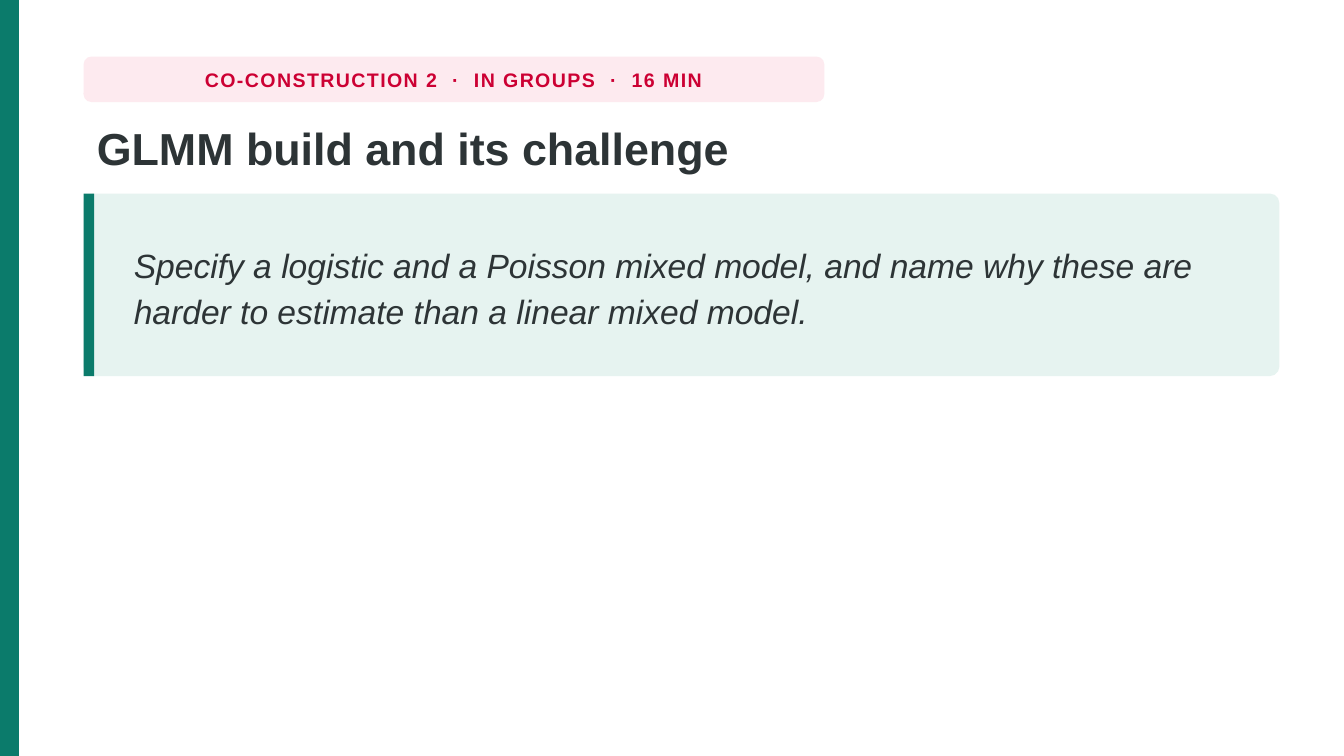
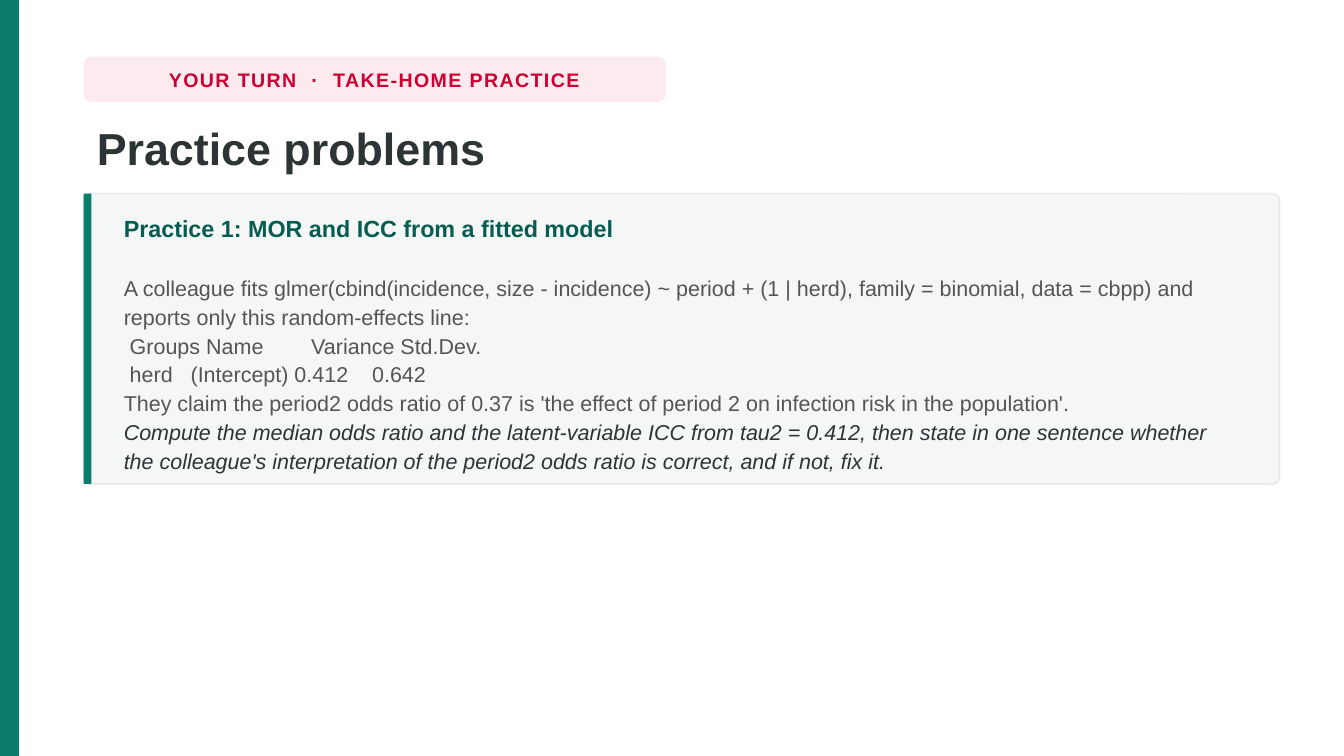
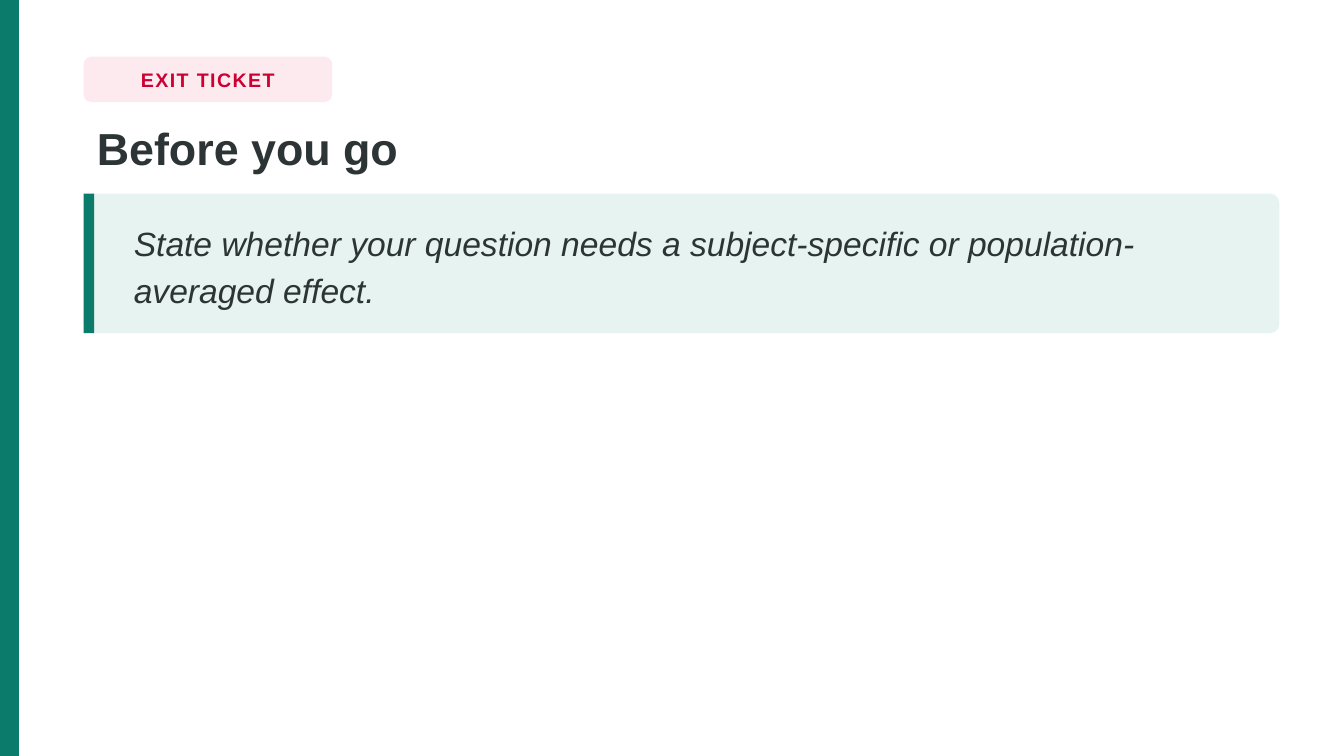
"""Build three activity slides for a session on mixed models."""
from pptx import Presentation, util as u
from pptx.dml import color
from pptx.enum import shapes, text

COLORS = {
    "green": "0B7B6B",
    "dark_green": "065C50",
    "mint": "E6F3F0",
    "pink": "FDEAEF",
    "red": "CC0033",
    "ink": "2D3436",
    "gray": "555555",
    "mist": "F4F7F6",
    "edge": "E8ECEE",
    "white": "FFFFFF",
}
FONT = "Arial"
WIDTH, HEIGHT = 25.4, 14.29
LEFT, CONTENT_WIDTH = 1.58, 22.6
CARD_TOP = 3.66


def rgb(name):
    return color.RGBColor.from_string(COLORS[name])


class Deck:
    """Shared style and the slide being filled."""

    def __init__(self):
        self.prs = Presentation()
        self.prs.slide_width, self.prs.slide_height = u.Cm(WIDTH), u.Cm(HEIGHT)
        self.slide = None

    def start(self, label, heading):
        self.slide = self.prs.slides.add_slide(self.prs.slide_layouts[6])
        background = self.slide.background.fill
        background.solid()
        background.fore_color.rgb = rgb("white")
        self.block(0, 0, 0.36, HEIGHT, "green")
        self.badge(label)
        title = self.frame(LEFT, 2.13, CONTENT_WIDTH, 1.42)
        self.add_words(title.paragraphs[0], heading, 24, "ink", 1.02, bold=True)

    def block(self, left, top, width, height, fill, radius=0, edge=None):
        kind = shapes.MSO_SHAPE.ROUNDED_RECTANGLE if radius else shapes.MSO_SHAPE.RECTANGLE
        block = self.slide.shapes.add_shape(
            kind, u.Cm(left), u.Cm(top), u.Cm(width), u.Cm(height))
        block.shadow.inherit = False
        block.fill.solid()
        block.fill.fore_color.rgb = rgb(fill)
        if radius:
            block.adjustments[0] = radius / min(width, height)
        if edge:
            block.line.color.rgb = rgb(edge)
            block.line.width = u.Pt(1)
        else:
            block.line.fill.background()

    def frame(self, left, top, width, height, middle=False, wrap=True):
        frame = self.slide.shapes.add_textbox(
            u.Cm(left), u.Cm(top), u.Cm(width), u.Cm(height)).text_frame
        frame.word_wrap = wrap
        frame.vertical_anchor = text.MSO_ANCHOR.MIDDLE if middle else text.MSO_ANCHOR.TOP
        return frame

    def add_words(self, paragraph, words, size, ink, spacing=None, bold=False, italic=False):
        paragraph.line_spacing = spacing
        run = paragraph.add_run()
        run.text = words
        run.font.name, run.font.size = FONT, u.Pt(size)
        run.font.bold, run.font.italic = bold, italic
        run.font.color.rgb = rgb(ink)
        return run

    def badge(self, label):
        area = (LEFT, 1.07, 1.4 + 0.3 * len(label), 0.86)
        self.block(*area, "pink", radius=0.15)
        line = self.frame(*area, middle=True, wrap=False).paragraphs[0]
        line.alignment = text.PP_ALIGN.CENTER
        run = self.add_words(line, label, 10.5, "red", bold=True)
        run.font._element.set("spc", "80")

    def card(self, height, fill, stripe, gap, margin, radius, edge=None, middle=False):
        self.block(LEFT, CARD_TOP, CONTENT_WIDTH, height, fill, radius, edge)
        self.block(LEFT, CARD_TOP, stripe, height, "green")
        indent, right = stripe + gap, gap + 0.2
        return self.frame(LEFT + indent, CARD_TOP + margin,
                          CONTENT_WIDTH - indent - right, height - 2 * margin, middle)

    def prompt(self, height, words):
        frame = self.card(height, "mint", 0.2, 0.5, 0.13, 0.18, middle=True)
        self.add_words(frame.paragraphs[0], words, 18, "ink", 1.16, italic=True)

    def problem(self, height, heading, setup, task):
        frame = self.card(height, "mist", 0.15, 0.36, 0.2, 0.13, edge="edge")
        self.add_words(frame.paragraphs[0], heading, 12.5, "dark_green", 1.12, bold=True)
        frame.paragraphs[0].space_after = u.Pt(16)
        for sentence in setup:
            self.add_words(frame.add_paragraph(), sentence, 11.5, "gray", 1.12)
        self.add_words(frame.add_paragraph(), task, 11.5, "ink", 1.12, italic=True)


def main():
    deck = Deck()

    deck.start("CO-CONSTRUCTION 2  ·  IN GROUPS  ·  16 MIN", "GLMM build and its challenge")
    deck.prompt(3.45, "Specify a logistic and a Poisson mixed model, and name why these are "
                      "harder to estimate than a linear mixed model.")

    deck.start("YOUR TURN  ·  TAKE-HOME PRACTICE", "Practice problems")
    deck.problem(
        5.49,
        "Practice 1: MOR and ICC from a fitted model",
        [
            "A colleague fits glmer(cbind(incidence, size - incidence) ~ period + (1 | herd), "
            "family = binomial, data = cbpp) and reports only this random-effects line:",
            " Groups Name        Variance Std.Dev.",
            " herd   (Intercept) 0.412    0.642",
            "They claim the period2 odds ratio of 0.37 is 'the effect of period 2 on "
            "infection risk in the population'.",
        ],
        "Compute the median odds ratio and the latent-variable ICC from tau2 = 0.412, then "
        "state in one sentence whether the colleague's interpretation of the period2 odds "
        "ratio is correct, and if not, fix it.",
    )

    deck.start("EXIT TICKET", "Before you go")
    deck.prompt(2.64, "State whether your question needs a subject-specific or "
                      "population-averaged effect.")

    deck.prs.save("out.pptx")


if __name__ == "__main__":
    main()
